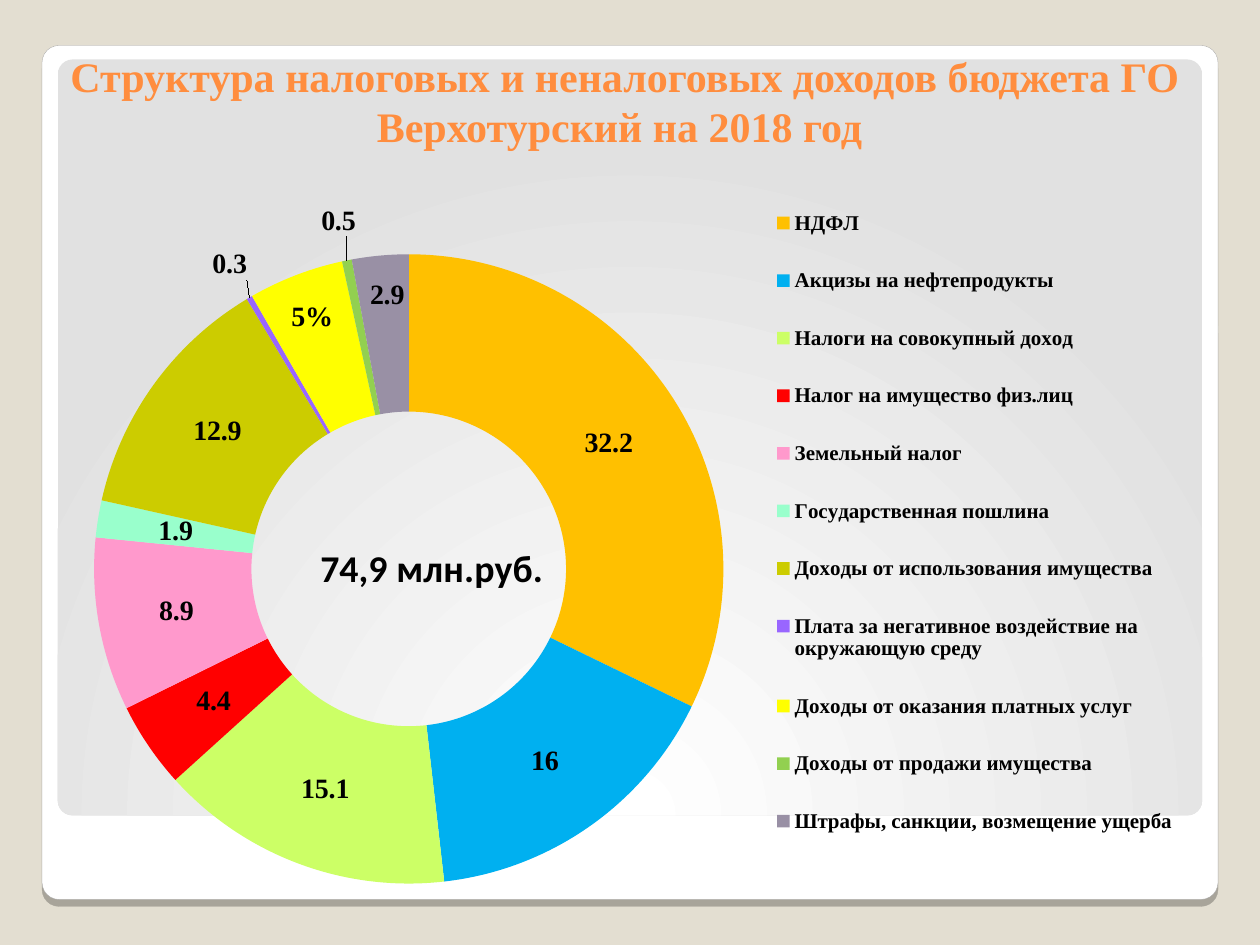
import dataclasses
from typing import Optional

import lxml.etree
import pptx
import pptx.chart.data
import pptx.dml.color
import pptx.enum.chart
import pptx.enum.shapes
import pptx.enum.text
import pptx.oxml
import pptx.oxml.ns
import pptx.util

Pt = pptx.util.Pt
RGB = pptx.dml.color.RGBColor
qn = pptx.oxml.ns.qn
NS_A = 'xmlns:a="http://schemas.openxmlformats.org/drawingml/2006/main"'

BEIGE = RGB(0xE3, 0xDE, 0xD1)
WHITE = RGB(0xFF, 0xFF, 0xFF)
EDGE = RGB(0xA4, 0xA3, 0xA3)
ORANGE = RGB(0xFF, 0x8D, 0x3E)
BLACK = RGB(0, 0, 0)
SERIF = "Times New Roman"

PANEL_SHADOW = f"""<a:effectLst {NS_A}>
  <a:outerShdw blurRad="0" dist="50800" dir="5400000" algn="t" rotWithShape="0">
    <a:srgbClr val="000000"><a:alpha val="25000"/></a:srgbClr>
  </a:outerShdw></a:effectLst>"""
PANEL_GRADIENT = f"""<a:gradFill {NS_A} rotWithShape="1"><a:gsLst>
  <a:gs pos="0"><a:srgbClr val="FFFFFF"/></a:gs>
  <a:gs pos="100000"><a:srgbClr val="E1E1E1"/></a:gs></a:gsLst>
  <a:path path="circle">
    <a:fillToRect l="50000" t="175000" r="50000" b="-75000"/>
  </a:path></a:gradFill>"""


@dataclasses.dataclass
class Box:
    x: float
    y: float
    w: float
    h: float


@dataclasses.dataclass
class Income:
    name: str
    value: float
    color: RGB
    label_shift: Optional[tuple] = None  # fractions of the chart size
    percent: bool = False


INCOMES = [
    Income("НДФЛ", 32.2, RGB(0xFF, 0xC0, 0x00)),
    Income("Акцизы на нефтепродукты", 16, RGB(0x00, 0xB0, 0xF0)),
    Income("Налоги на совокупный доход", 15.1, RGB(0xCC, 0xFF, 0x66)),
    Income("Налог на имущество физ.лиц", 4.4, RGB(0xFF, 0x00, 0x00)),
    Income("Земельный налог", 8.9, RGB(0xFF, 0x99, 0xCC)),
    Income("Государственная пошлина", 1.9, RGB(0x99, 0xFF, 0xCC)),
    Income("Доходы от использования имущества", 12.9, RGB(0xCC, 0xCC, 0x00)),
    Income("Плата за негативное воздействие на окружающую среду", 0.3,
           RGB(0x99, 0x66, 0xFF), (-0.05, -0.13)),
    Income("Доходы от оказания платных услуг", 4.9, RGB(0xFF, 0xFF, 0x00),
           (-0.01, -0.04), True),
    Income("Доходы от продажи имущества", 0.5, RGB(0x92, 0xD0, 0x50), (-0.02, -0.15)),
    Income("Штрафы, санкции, возмещение ущерба", 2.9, RGB(0x99, 0x90, 0xA5), (0, -0.05)),
]


def set_font(font, name: str, size: float, color: RGB = BLACK) -> None:
    font.name, font.size, font.bold = name, Pt(size), True
    font.color.rgb = color


def add_panel(s, box: Box):
    sp = s.shapes.add_shape(pptx.enum.shapes.MSO_SHAPE.ROUNDED_RECTANGLE,
                            Pt(box.x), Pt(box.y), Pt(box.w), Pt(box.h))
    sp.adjustments[0] = 0.02
    sp.shadow.inherit = False
    return sp


def set_layout(parent, index: int, **values) -> None:
    """Place a chart part by hand; the keywords are c:manualLayout children."""
    for old in parent.findall(qn("c:layout")):
        parent.remove(old)
    layout = parent.makeelement(qn("c:layout"), {})
    manual = lxml.etree.SubElement(layout, qn("c:manualLayout"))
    for tag, value in values.items():
        lxml.etree.SubElement(manual, qn(f"c:{tag}")).set("val", str(value))
    parent.insert(index, layout)


def add_panels(s) -> None:
    sp = add_panel(s, Box(24, 26, 672, 488))
    sp.fill.solid()
    sp.fill.fore_color.rgb = WHITE
    sp.line.color.rgb = EDGE
    sp.line.width = Pt(0.16)
    spPr = sp._element.spPr
    spPr.replace(spPr.find(qn("a:effectLst")), pptx.oxml.parse_xml(PANEL_SHADOW))

    sp = add_panel(s, Box(33, 34, 654, 432))
    sp.line.fill.background()
    sp.fill.background()
    spPr = sp._element.spPr
    spPr.replace(spPr.find(qn("a:noFill")), pptx.oxml.parse_xml(PANEL_GRADIENT))


def add_title(s, box: Box, text: str) -> None:
    tf = s.shapes.add_textbox(Pt(box.x), Pt(box.y), Pt(box.w), Pt(box.h)).text_frame
    tf.word_wrap = True
    tf.vertical_anchor = pptx.enum.text.MSO_ANCHOR.BOTTOM
    p = tf.paragraphs[0]
    p.alignment = pptx.enum.text.PP_ALIGN.CENTER
    r = p.add_run()
    r.text = text
    set_font(r.font, SERIF, 24, ORANGE)


def add_doughnut(s, box: Box, total: str) -> None:
    data = pptx.chart.data.CategoryChartData()
    data.categories = [i.name for i in INCOMES]
    data.add_series("Series 1", [i.value for i in INCOMES])
    chart = s.shapes.add_chart(pptx.enum.chart.XL_CHART_TYPE.DOUGHNUT, Pt(box.x),
                               Pt(box.y), Pt(box.w), Pt(box.h), data).chart
    chart.font.size, chart.font.name = Pt(18), "DejaVu Sans"
    chart.font.color.rgb = BLACK
    plot = chart.plots[0]
    plot.vary_by_categories = True
    set_layout(plot._element.getparent(), 0, layoutTarget="outer", xMode="edge",
               yMode="edge", x=0.02, y=0.11, w=0.58, h=0.81)

    # Total in the hole
    tf = chart.chart_title.text_frame
    r = tf.paragraphs[0].add_run()
    r.text = total
    set_font(r.font, "Calibri", 21.6)
    set_layout(chart.chart_title._element, 1, xMode="edge", yMode="edge", x=0.23, y=0.47)

    # Legend
    chart.has_legend = True
    chart.legend.position = pptx.enum.chart.XL_LEGEND_POSITION.RIGHT
    chart.legend.include_in_layout = False
    set_font(chart.legend.font, SERIF, 12)
    set_layout(chart.legend._element, 1, xMode="edge", yMode="edge",
               x=0.61, y=0.01, w=0.35, h=0.89)

    # Slices and their labels
    series = plot.series[0]
    labels = series.data_labels
    labels.show_value = True
    set_font(labels.font, SERIF, 16)
    for n, income in enumerate(INCOMES):
        point = series.points[n]
        point.format.fill.solid()
        point.format.fill.fore_color.rgb = income.color
        point.format.line.fill.background()
        if income.label_shift:
            set_font(point.data_label.font, SERIF, 16)
            dLbl = labels._element.xpath(f"c:dLbl[c:idx/@val='{n}']")[0]
            dx, dy = income.label_shift
            set_layout(dLbl, 1, x=dx, y=dy)
            dLbl.find(qn("c:showVal")).set("val", str(int(not income.percent)))
            dLbl.find(qn("c:showPercent")).set("val", str(int(income.percent)))


def main() -> None:
    prs = pptx.Presentation()
    prs.slide_width, prs.slide_height = Pt(720), Pt(540)
    s = prs.slides.add_slide(prs.slide_layouts[6])
    s.background.fill.solid()
    s.background.fill.fore_color.rgb = BEIGE
    add_panels(s)
    add_title(s, Box(17, 16.5, 680, 73.5),
              "Структура налоговых и неналоговых доходов бюджета ГО "
              "Верхотурский на 2018 год ")
    add_doughnut(s, Box(22.5, 96.5, 681, 444), "74,9 млн.руб.")
    prs.save("out.pptx")


if __name__ == "__main__":
    main()
